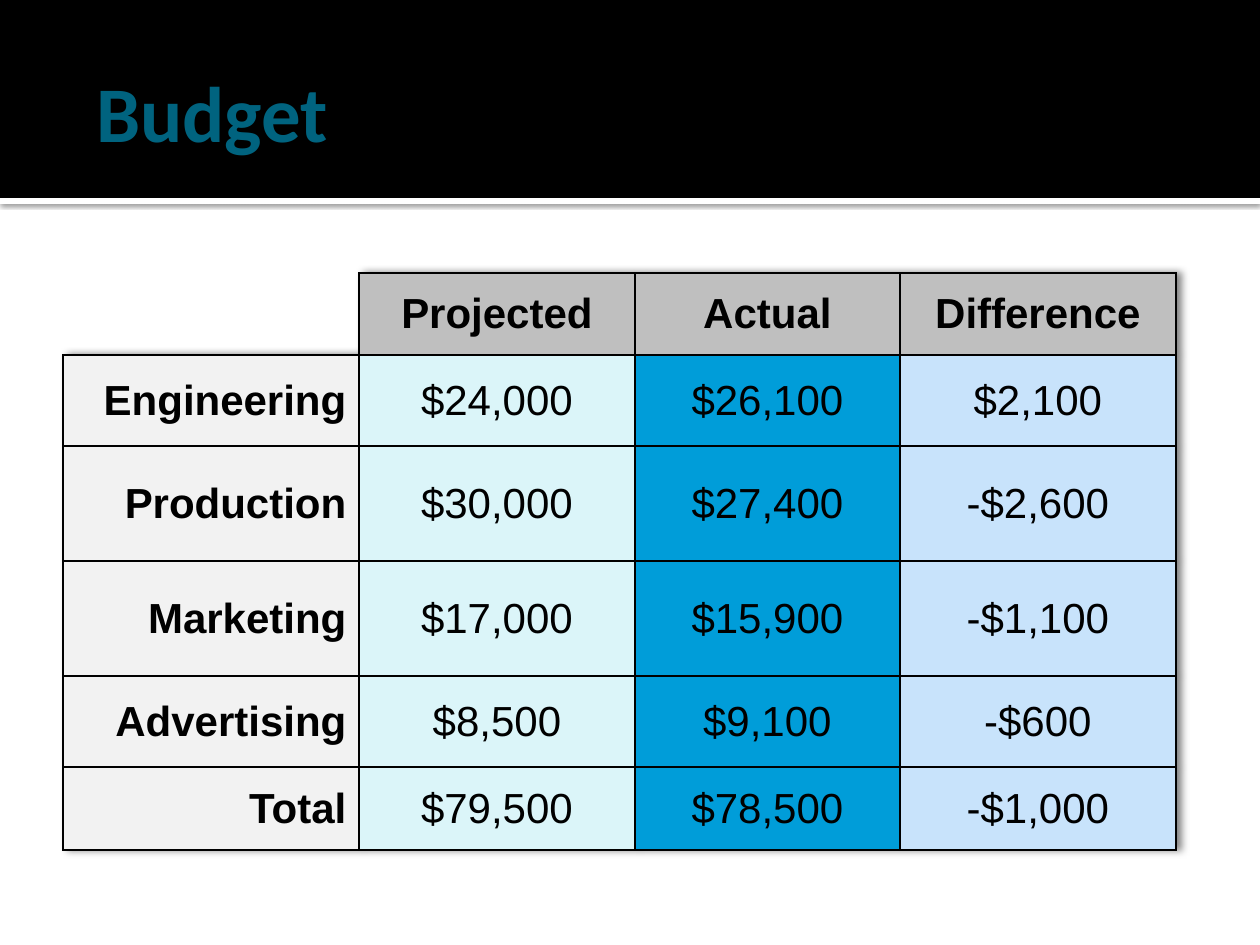
from dataclasses import dataclass

import pptx
import pptx.dml.color
import pptx.enum.shapes
import pptx.enum.text
import pptx.oxml
import pptx.oxml.ns
import pptx.util

SCALE = 914400 / 126  # EMU in one px
NS = pptx.oxml.ns.nsdecls("a")
ALIGN = pptx.enum.text.PP_ALIGN
MIDDLE = pptx.enum.text.MSO_ANCHOR.MIDDLE
PLAIN = "{2D5ABB26-0587-4C30-8999-92F81FD0307C}"  # table style without grid


@dataclass(frozen=True)
class Theme:
    black: str = "000000"
    white: str = "FFFFFF"
    title: str = "00637F"
    head: str = "BFBFBF"
    columns: tuple = ("F2F2F2", "DBF5F9", "009DD9", "C8E3FB")
    title_font: str = "Calibri"
    body_font: str = "Arial"
    title_size: int = 45
    body_size: int = 24


THEME = Theme()
ROWS = [
    ("", "Projected", "Actual", "Difference"),
    ("Engineering", "$24,000", "$26,100", "$2,100"),
    ("Production", "$30,000", "$27,400", "-$2,600"),
    ("Marketing", "$17,000", "$15,900", "-$1,100"),
    ("Advertising", "$8,500", "$9,100", "-$600"),
    ("Total", "$79,500", "$78,500", "-$1,000"),
]
WIDTHS = (296, 276, 265, 276)
HEIGHTS = (82, 91, 115, 115, 91, 83)


def px(count):
    return pptx.util.Emu(round(count * SCALE))


def paint(fill, color):
    fill.solid()
    fill.fore_color.rgb = pptx.dml.color.RGBColor.from_string(color)


def write(frame, text, font, size, color, bold, align=ALIGN.LEFT):
    para = frame.paragraphs[0]
    para.alignment = align
    run = para.add_run()
    run.text = text
    run.font.name = font
    run.font.size = pptx.util.Pt(size)
    run.font.bold = bold
    run.font.color.rgb = pptx.dml.color.RGBColor.from_string(color)


def shadow(blur, dist, angle, alpha):
    """Return an effect list; blur and dist in points, alpha in percent."""
    return pptx.oxml.parse_xml(
        f'<a:effectLst {NS}><a:outerShdw blurRad="{pptx.util.Pt(blur)}" '
        f'dist="{pptx.util.Pt(dist)}" dir="{angle * 60000}" algn="tl" rotWithShape="0">'
        f'<a:srgbClr val="{THEME.black}"><a:alpha val="{alpha * 1000}"/></a:srgbClr>'
        "</a:outerShdw></a:effectLst>")


def edge(cell, sides):
    """Draw 1 pt lines on the given sides, in the order L, R, T, B."""
    props = cell._tc.get_or_add_tcPr()
    for place, side in enumerate(sides):
        props.insert(place, pptx.oxml.parse_xml(
            f'<a:ln{side} {NS} w="12700"><a:solidFill><a:srgbClr val="{THEME.black}"/>'
            f"</a:solidFill></a:ln{side}>"))


def block(slide, left, top, width, height, color):
    shape = slide.shapes.add_shape(
        pptx.enum.shapes.MSO_SHAPE.RECTANGLE, px(left), px(top), px(width), px(height))
    shape.shadow.inherit = False
    paint(shape.fill, color)
    shape.line.fill.background()
    return shape


def header(slide, left, top, width, height, text):
    """Black band with a white strip below it and the title inside."""
    strip = block(slide, left, top + height, width, 6, THEME.white)
    props = strip._element.spPr
    props.remove(props.find(pptx.oxml.ns.qn("a:effectLst")))
    props.append(shadow(2.5, 0.8, 90, 60))
    block(slide, left, top, width, height, THEME.black)
    box = slide.shapes.add_textbox(px(left + 84), px(top + 32), px(1071), px(158))
    frame = box.text_frame
    frame.word_wrap = True
    frame.vertical_anchor = MIDDLE
    frame.margin_left = pptx.util.Inches(0.1)
    frame.margin_right = pptx.util.Inches(0.05)
    write(frame, text, THEME.title_font, THEME.title_size, THEME.title, True)


def budget(slide, left, top):
    table = slide.shapes.add_table(
        len(ROWS), len(WIDTHS), px(left), px(top), px(sum(WIDTHS)), px(sum(HEIGHTS))).table
    table.first_row = table.horz_banding = False
    style = table._tbl.tblPr.find(pptx.oxml.ns.qn("a:tableStyleId"))
    style.text = PLAIN
    style.addprevious(shadow(4, 3, 0, 50))
    for column, width in zip(table.columns, WIDTHS):
        column.width = px(width)
    for row, height in zip(table.rows, HEIGHTS):
        row.height = px(height)
    for r, texts in enumerate(ROWS):
        for c, text in enumerate(texts):
            cell = table.cell(r, c)
            if not text:
                cell.fill.background()
                edge(cell, "RB")
                continue
            cell.vertical_anchor = MIDDLE
            paint(cell.fill, THEME.columns[c] if r else THEME.head)
            edge(cell, "LRTB")
            write(cell.text_frame, text, THEME.body_font, THEME.body_size, THEME.black,
                  r == 0 or c == 0, ALIGN.CENTER if c else ALIGN.RIGHT)


def main():
    deck = pptx.Presentation()
    deck.slide_width, deck.slide_height = px(1260), px(945)
    slide = deck.slides.add_slide(deck.slide_layouts[6])
    paint(slide.background.fill, THEME.white)
    header(slide, 0, 0, 1260, 198, "Budget")
    budget(slide, 63, 273)
    deck.save("out.pptx")


if __name__ == "__main__":
    main()
